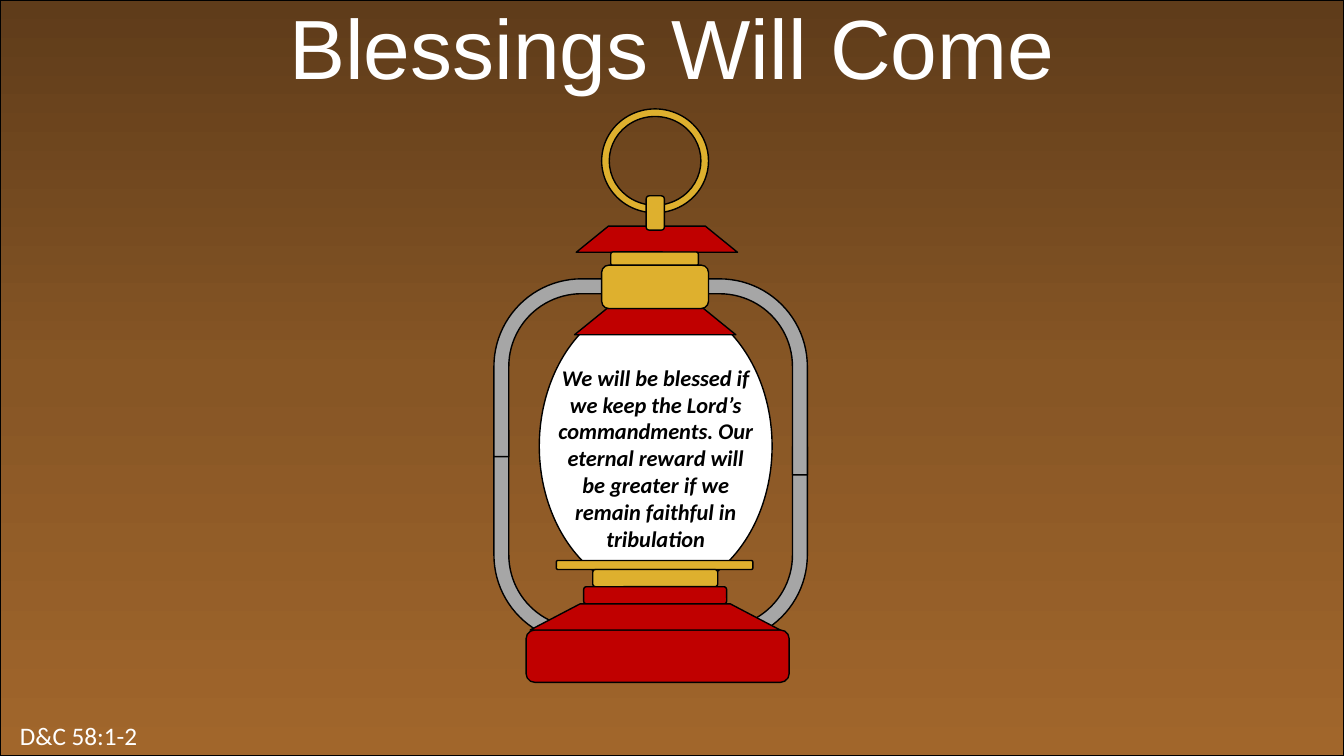
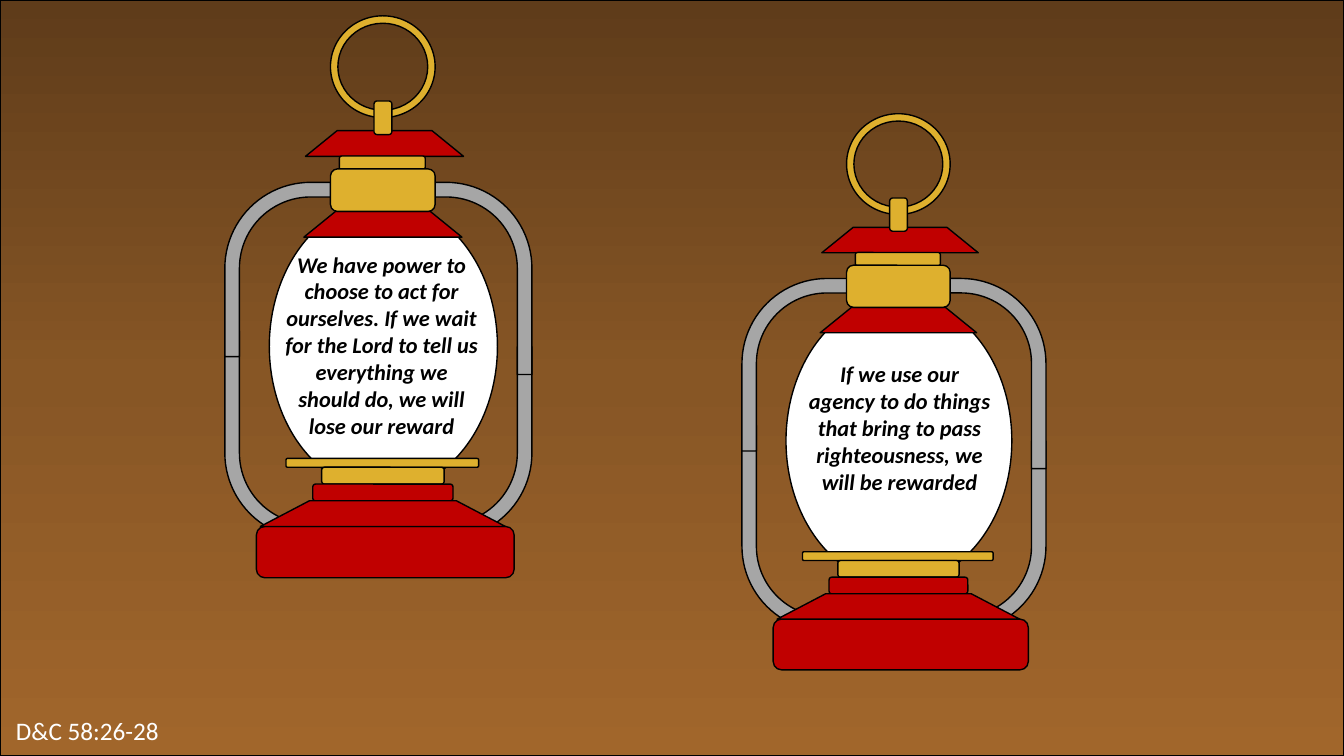
from copy import deepcopy
from dataclasses import dataclass

from pptx import Presentation
from pptx.dml.color import RGBColor
from pptx.enum.shapes import MSO_SHAPE
from pptx.enum.text import MSO_AUTO_SIZE, PP_ALIGN
from pptx.oxml.ns import qn
from pptx.shapes.autoshape import Shape
from pptx.slide import Slide
from pptx.util import Pt

BENT_ARROW = MSO_SHAPE.BENT_ARROW
DONUT = MSO_SHAPE.DONUT
OVAL = MSO_SHAPE.OVAL
RECTANGLE = MSO_SHAPE.RECTANGLE
ROUNDED = MSO_SHAPE.ROUNDED_RECTANGLE
TRAPEZOID = MSO_SHAPE.FLOWCHART_MANUAL_OPERATION
CENTER = PP_ALIGN.CENTER
LEFT = PP_ALIGN.LEFT
GROW = MSO_AUTO_SIZE.SHAPE_TO_FIT_TEXT

SLIDE_WIDTH, SLIDE_HEIGHT = 960, 540
BLANK_LAYOUT = 6
BLACK, WHITE = "000000", "FFFFFF"
RED, BRASS, STEEL = "C00000", "DEB02E", "A6A6A6"
BACKDROP_STOPS = ((0, "5F3C1A"), (0.5, "875625"), (1, "A1662B"))
HANDLE_BEND = (0.098, 0.139, 0.119, 0.576)
RING_WIDTH = (0.073,)


@dataclass(frozen=True)
class Box:
    left: float
    top: float
    width: float
    height: float


@dataclass(frozen=True)
class Part:
    preset: MSO_SHAPE
    color: str
    box: Box
    rotation: int = 0
    flips: tuple[str, ...] = ()
    adjustments: tuple[float, ...] = ()


@dataclass(frozen=True)
class TextStyle:
    font: str
    size: int
    color: str
    align: PP_ALIGN = LEFT
    emphasis: bool = False


@dataclass(frozen=True)
class Lantern:
    left: float
    top: float
    scale: float
    message: str
    message_box: Box


TITLE = TextStyle("Arial", 60, WHITE, CENTER)
REFERENCE = TextStyle("Calibri", 18, WHITE)
MESSAGE = TextStyle("Calibri", 16, BLACK, CENTER, True)


def handle(box: Box, *flips: str) -> Part:
    return Part(BENT_ARROW, STEEL, box, flips=flips, adjustments=HANDLE_BEND)


LANTERN_PARTS = (
    handle(Box(115.2, 241.2, 108.7, 149.8), "flipH", "flipV"),
    handle(Box(115.2, 111.6, 108.7, 149.8), "flipH"),
    handle(Box(0, 229.7, 108.7, 161.3), "flipV"),
    handle(Box(0, 111.6, 108.7, 136.8)),
    Part(OVAL, WHITE, Box(32.4, 135.4, 166.3, 211)),
    Part(TRAPEZOID, RED, Box(57.6, 142.6, 115.2, 18.7), 180),
    Part(TRAPEZOID, RED, Box(58.8, 83.7, 115.2, 18.7), 180),
    Part(ROUNDED, BRASS, Box(83.5, 102.2, 62.6, 9.8)),
    Part(ROUNDED, BRASS, Box(77, 111.6, 76.3, 31)),
    Part(DONUT, BRASS, Box(77, 0, 76.3, 74.2), adjustments=RING_WIDTH),
    Part(ROUNDED, BRASS, Box(103, 67.8, 24.5, 13), 270),
    Part(ROUNDED, BRASS, Box(44.6, 322.6, 140.4, 6.4)),
    Part(ROUNDED, RED, Box(23, 372.2, 187.9, 37.4)),
    Part(ROUNDED, BRASS, Box(70.6, 329, 89.3, 12.3)),
    Part(ROUNDED, RED, Box(64.1, 341.3, 102.2, 12.3)),
    Part(TRAPEZOID, RED, Box(25.9, 353.5, 178.6, 18.7), 180),
)


def rgb(color: str) -> RGBColor:
    return RGBColor.from_string(color)


def place(box: Box) -> tuple[Pt, Pt, Pt, Pt]:
    return Pt(box.left), Pt(box.top), Pt(box.width), Pt(box.height)


def outline(shape: Shape) -> None:
    shape.shadow.inherit = False
    shape.line.color.rgb = rgb(BLACK)
    shape.line.width = Pt(1)


def add_text(shapes, text: str, box: Box, style: TextStyle) -> None:
    frame = shapes.add_textbox(*place(box)).text_frame
    frame.word_wrap = True
    frame.auto_size = GROW
    paragraph = frame.paragraphs[0]
    paragraph.text = text
    paragraph.alignment = style.align
    font = paragraph.font
    font.name = style.font
    font.size = Pt(style.size)
    font.color.rgb = rgb(style.color)
    if style.emphasis:
        font.bold = font.italic = True


def add_backdrop(slide: Slide) -> None:
    backdrop = slide.shapes.add_shape(
        RECTANGLE, *place(Box(0, 0, SLIDE_WIDTH, SLIDE_HEIGHT))
    )
    outline(backdrop)
    fill = backdrop.fill
    fill.gradient()
    fill.gradient_angle = 270
    stop_list = backdrop._element.spPr.find(".//" + qn("a:gsLst"))
    stop_list.append(deepcopy(stop_list[-1]))
    for stop, (position, color) in zip(fill.gradient_stops, BACKDROP_STOPS):
        stop.position = position
        stop.color.rgb = rgb(color)


def add_part(shapes, part: Part, lantern: Lantern) -> None:
    scale = lantern.scale
    box = Box(
        lantern.left + part.box.left * scale,
        lantern.top + part.box.top * scale,
        part.box.width * scale,
        part.box.height * scale,
    )
    shape = shapes.add_shape(part.preset, *place(box))
    outline(shape)
    shape.fill.solid()
    shape.fill.fore_color.rgb = rgb(part.color)
    shape.rotation = part.rotation
    for index, value in enumerate(part.adjustments):
        shape.adjustments[index] = value
    for flip in part.flips:
        shape._element.spPr.get_or_add_xfrm().set(flip, "1")


def add_lantern(slide: Slide, lantern: Lantern) -> None:
    shapes = slide.shapes.add_group_shape().shapes
    for part in LANTERN_PARTS:
        add_part(shapes, part, lantern)
    add_text(shapes, lantern.message, lantern.message_box, MESSAGE)


def add_lantern_slide(
    deck: Presentation, reference: str, reference_box: Box,
    lanterns: tuple[Lantern, ...], title: str = "",
) -> None:
    slide = deck.slides.add_slide(deck.slide_layouts[BLANK_LAYOUT])
    add_backdrop(slide)
    if title:
        add_text(slide.shapes, title, Box(133.2, -6.5, 693.4, 80), TITLE)
    add_text(slide.shapes, reference, reference_box, REFERENCE)
    for lantern in lanterns:
        add_lantern(slide, lantern)


def main() -> None:
    deck = Presentation()
    deck.slide_width, deck.slide_height = Pt(SLIDE_WIDTH), Pt(SLIDE_HEIGHT)
    blessed = Lantern(
        352.8, 77.8, 1,
        "We will be blessed if we keep the Lord’s commandments. Our eternal "
        "reward will be greater if we remain faithful in tribulation",
        Box(391.7, 256.3, 153.4, 143.3),
    )
    power = Lantern(
        160.6, 11.3, 0.98,
        "We have power to choose to act for ourselves. If we wait for the Lord "
        "to tell us everything we should do, we will lose our reward",
        Box(196.6, 175.5, 152, 143.3),
    )
    agency = Lantern(
        530, 81.2, 0.97,
        "If we use our agency to do things that bring to pass righteousness, "
        "we will be rewarded",
        Box(568.1, 253.8, 149, 104.4),
    )
    add_lantern_slide(
        deck, "D&C 58:1-2", Box(7.2, 511.2, 141.8, 29), (blessed,),
        "Blessings Will Come",
    )
    add_lantern_slide(
        deck, "D&C 58:26-28", Box(4.3, 507.6, 268.6, 29), (power, agency)
    )
    deck.save("out.pptx")


if __name__ == "__main__":
    main()
